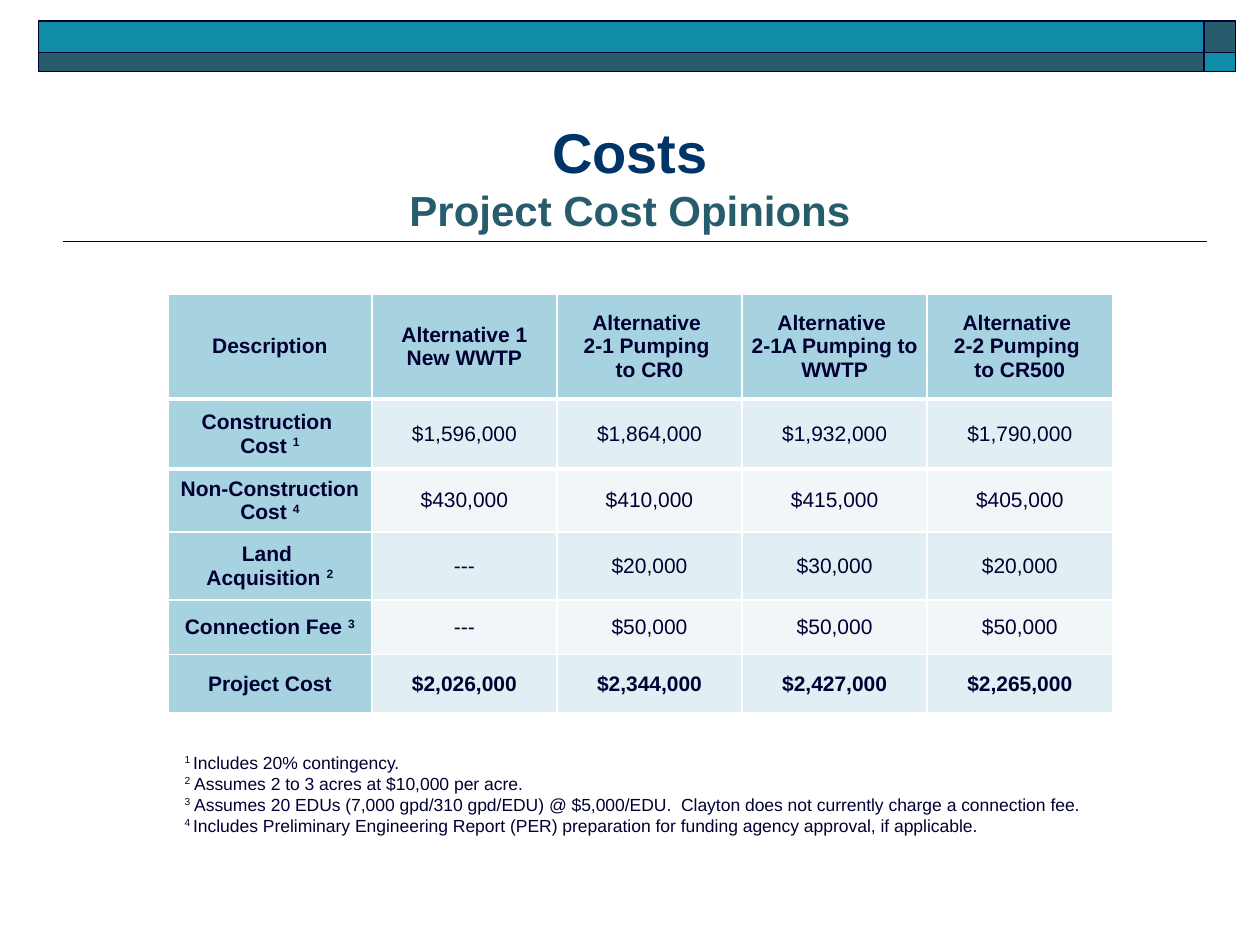
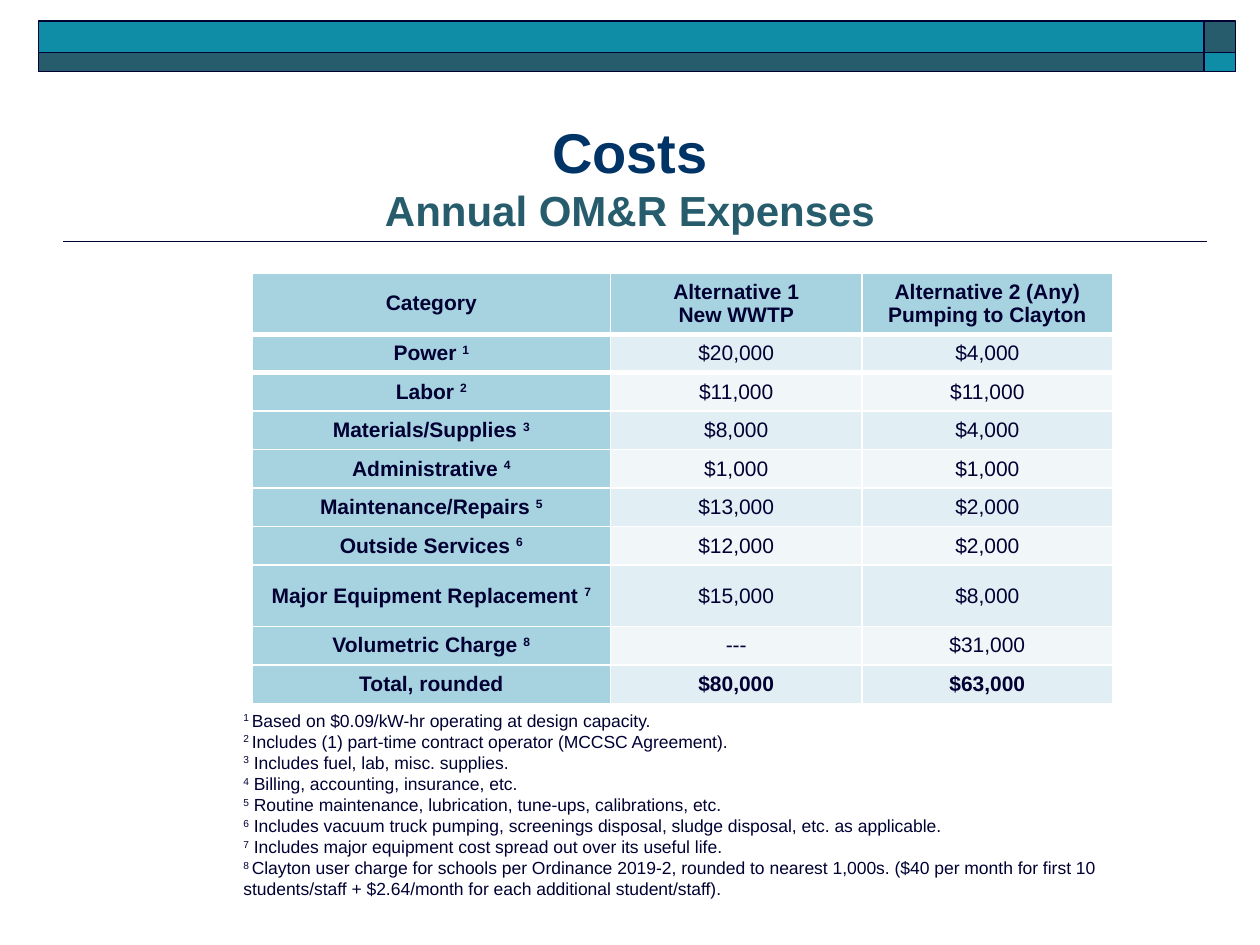
"""Build two cost slides: project cost opinions and annual OM&R expenses."""
from dataclasses import dataclass

import lxml.etree
import pptx
import pptx.dml.color
import pptx.enum.shapes
import pptx.enum.text
import pptx.oxml
import pptx.oxml.ns
import pptx.presentation
import pptx.slide
import pptx.table
import pptx.text.text
import pptx.util

Pt = pptx.util.Pt
RGBColor = pptx.dml.color.RGBColor

FONT = "Arial"
INK = RGBColor(0x00, 0x00, 0x33)
NAVY = RGBColor(0x00, 0x33, 0x66)
SLATE = RGBColor(0x27, 0x5C, 0x6D)
TEAL = RGBColor(0x10, 0x8D, 0xA6)
WHITE = RGBColor(0xFF, 0xFF, 0xFF)
HEADING_FILL = RGBColor(0xA7, 0xD2, 0xDF)
BAND_FILLS = (RGBColor(0xE1, 0xEE, 0xF3), RGBColor(0xF1, 0xF7, 0xF9))
SUPERSCRIPT_MARK = "|"


@dataclass(frozen=True)
class Band:
    left: float
    top: float
    width: float
    height: float
    color: RGBColor


@dataclass(frozen=True)
class CostTable:
    left: float
    top: float
    column_widths: list[float]
    row_heights: list[float]
    rows: list[list[str]]


@dataclass(frozen=True)
class Notes:
    left: float
    top: float
    width: float
    height: float
    lines: list[str]


@dataclass(frozen=True)
class CostSlide:
    subtitle: str
    notes: Notes
    table: CostTable


BANDS = [
    Band(688, 12, 18, 18, SLATE),
    Band(22, 12, 666, 18, TEAL),
    Band(22, 30, 666, 11, SLATE),
    Band(688, 30, 18, 11, TEAL),
]

PROJECT_COSTS = CostSlide(
    "Project Cost Opinions",
    Notes(98.5, 426, 561.5, 55.5, [
        "|1 |Includes 20% contingency.",
        "|2| Assumes 2 to 3 acres at $10,000 per acre.",
        "|3| Assumes 20 EDUs (7,000 gpd/310 gpd/EDU) @ $5,000/EDU.  "
        "Clayton does not currently charge a connection fee.",
        "|4 |Includes Preliminary Engineering Report (PER) preparation "
        "for funding agency approval, if applicable.",
    ]),
    CostTable(96, 168, [116.5] + [105.8] * 4, [60, 40, 36, 39, 31, 33.5], [
        ["Description", "Alternative 1 New WWTP",
         "Alternative \n2-1 Pumping \nto CR0",
         "Alternative \n2-1A Pumping to WWTP",
         "Alternative \n2-2 Pumping \nto CR500"],
        ["Construction \nCost |1", "$1,596,000", "$1,864,000", "$1,932,000", "$1,790,000"],
        ["Non-Construction Cost |4", "$430,000", "$410,000", "$415,000", "$405,000"],
        ["Land \nAcquisition |2", "---", "$20,000", "$30,000", "$20,000"],
        ["Connection Fee |3", "---", "$50,000", "$50,000", "$50,000"],
        ["Project Cost", "$2,026,000", "$2,344,000", "$2,427,000", "$2,265,000"],
    ]),
)

ANNUAL_EXPENSES = CostSlide(
    "Annual OM&R Expenses",
    Notes(132, 402, 561.5, 116.5, [
        "|1 |Based on $0.09/kW-hr operating at design capacity.",
        "|2 |Includes (1) part-time contract operator (MCCSC Agreement).",
        "|3| Includes fuel, lab, misc. supplies.",
        "|4| Billing, accounting, insurance, etc.",
        "|5| Routine maintenance, lubrication, tune-ups, calibrations, etc.",
        "|6| Includes vacuum truck pumping, screenings disposal, sludge disposal, "
        "etc. as applicable.",
        "|7| Includes major equipment cost spread out over its useful life.",
        "|8 |Clayton user charge for schools per Ordinance 2019-2, rounded to nearest "
        "1,000s. ($40 per month for first 10 students/staff + $2.64/month for each "
        "additional student/staff).",
    ]),
    CostTable(144, 156, [205, 143.5, 143.5], [35] + [22] * 6 + [35] + [22] * 2, [
        ["Category", "Alternative 1\nNew WWTP", "Alternative 2 (Any)\nPumping to Clayton"],
        ["Power |1", "$20,000", "$4,000"],
        ["Labor |2", "$11,000", "$11,000"],
        ["Materials/Supplies |3", "$8,000", "$4,000"],
        ["Administrative |4", "$1,000", "$1,000"],
        ["Maintenance/Repairs |5", "$13,000", "$2,000"],
        ["Outside Services |6", "$12,000", "$2,000"],
        ["Major Equipment Replacement |7", "$15,000", "$8,000"],
        ["Volumetric Charge |8", "---", "$31,000"],
        ["Total, rounded", "$80,000", "$63,000"],
    ]),
)


def set_font(font: pptx.text.text.Font, size: float, color: RGBColor, bold: bool) -> None:
    font.name = FONT
    font.size = Pt(size)
    font.bold = bold
    font.color.rgb = color


def write_lines(frame: pptx.text.text.TextFrame, lines: list[str], size: float, bold: bool,
                alignment: pptx.enum.text.PP_ALIGN) -> None:
    for index, line in enumerate(lines):
        paragraph = frame.add_paragraph() if index else frame.paragraphs[0]
        paragraph.alignment = alignment
        set_font(paragraph.font, size, INK, bold)
        for position, part in enumerate(line.split(SUPERSCRIPT_MARK)):
            if part:
                run = paragraph.add_run()
                run.text = part
                if position % 2:
                    run.font._element.set("baseline", "30000")


def draw_frame(slide: pptx.slide.Slide) -> None:
    rule = slide.shapes.add_connector(
        pptx.enum.shapes.MSO_CONNECTOR.STRAIGHT, Pt(690), Pt(138), Pt(36), Pt(138))
    rule.line.color.rgb = INK
    rule.line.width = Pt(1)
    lxml.etree.SubElement(rule._element.spPr, pptx.oxml.ns.qn("a:effectLst"))
    for band in BANDS:
        shape = slide.shapes.add_shape(
            pptx.enum.shapes.MSO_SHAPE.RECTANGLE,
            Pt(band.left), Pt(band.top), Pt(band.width), Pt(band.height))
        shape.shadow.inherit = False
        shape.fill.solid()
        shape.fill.fore_color.rgb = band.color
        shape.line.color.rgb = INK
        shape.line.width = Pt(1)


def write_title(slide: pptx.slide.Slide, subtitle: str) -> None:
    title = slide.shapes.title
    title.left, title.top, title.width, title.height = Pt(36), Pt(48), Pt(648), Pt(90)
    frame = title.text_frame
    frame.auto_size = pptx.enum.text.MSO_AUTO_SIZE.NONE
    frame.vertical_anchor = pptx.enum.text.MSO_ANCHOR.BOTTOM
    paragraph = frame.paragraphs[0]
    paragraph.alignment = pptx.enum.text.PP_ALIGN.CENTER
    heading = paragraph.add_run()
    heading.text = "Costs"
    set_font(heading.font, 32, NAVY, True)
    paragraph.add_line_break()
    subheading = paragraph.add_run()
    subheading.text = subtitle
    set_font(subheading.font, 24, SLATE, True)


def draw_notes(slide: pptx.slide.Slide, notes: Notes) -> None:
    box = slide.shapes.add_textbox(
        Pt(notes.left), Pt(notes.top), Pt(notes.width), Pt(notes.height))
    box.text_frame.word_wrap = True
    box.text_frame.auto_size = pptx.enum.text.MSO_AUTO_SIZE.SHAPE_TO_FIT_TEXT
    write_lines(box.text_frame, notes.lines, 10, False, pptx.enum.text.PP_ALIGN.LEFT)


def set_border(cell: pptx.table._Cell, side: str, width: float) -> None:
    properties = cell._tc.get_or_add_tcPr()
    border = pptx.oxml.parse_xml(
        f'<a:{side} {pptx.oxml.ns.nsdecls("a")} w="{Pt(width)}"><a:solidFill>'
        f'<a:srgbClr val="{WHITE}"/></a:solidFill></a:{side}>')
    properties.insert(0, border)


def draw_table(slide: pptx.slide.Slide, cost_table: CostTable) -> None:
    widths, heights = cost_table.column_widths, cost_table.row_heights
    table = slide.shapes.add_table(
        len(heights), len(widths), Pt(cost_table.left), Pt(cost_table.top),
        Pt(sum(widths)), Pt(sum(heights))).table
    for column, width in zip(table.columns, widths):
        column.width = Pt(width)
    for row, height in zip(table.rows, heights):
        row.height = Pt(height)
    last_row = len(heights) - 1
    for row_index, texts in enumerate(cost_table.rows):
        for column_index, text in enumerate(texts):
            cell = table.cell(row_index, column_index)
            is_heading = row_index == 0 or column_index == 0
            cell.fill.solid()
            cell.fill.fore_color.rgb = (
                HEADING_FILL if is_heading else BAND_FILLS[(row_index - 1) % 2])
            if row_index == 0:
                set_border(cell, "lnB", 3)
            elif row_index == 1:
                set_border(cell, "lnT", 3)
            cell.vertical_anchor = pptx.enum.text.MSO_ANCHOR.MIDDLE
            cell.margin_left = cell.margin_right = Pt(5)
            cell.margin_top = cell.margin_bottom = Pt(0)
            write_lines(cell.text_frame, text.split("\n"), 12,
                        is_heading or row_index == last_row, pptx.enum.text.PP_ALIGN.CENTER)


def add_cost_slide(presentation: pptx.presentation.Presentation, content: CostSlide) -> None:
    slide = presentation.slides.add_slide(presentation.slide_layouts.get_by_name("Title Only"))
    draw_frame(slide)
    write_title(slide, content.subtitle)
    draw_notes(slide, content.notes)
    draw_table(slide, content.table)


def main() -> None:
    presentation = pptx.Presentation()
    presentation.slide_width = Pt(720)
    presentation.slide_height = Pt(540)
    for content in (PROJECT_COSTS, ANNUAL_EXPENSES):
        add_cost_slide(presentation, content)
    presentation.save("out.pptx")


if __name__ == "__main__":
    main()
